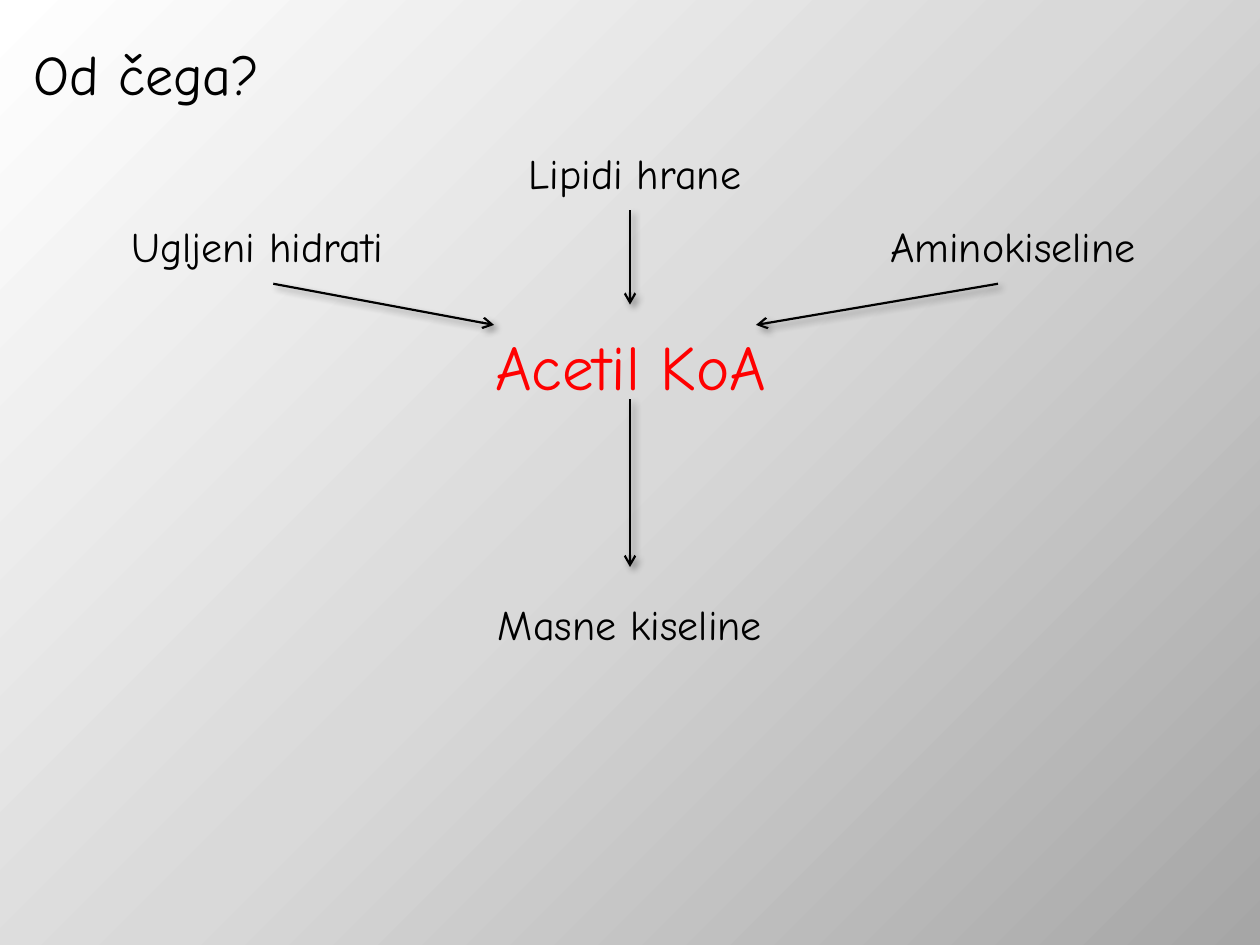
from lxml import etree
from pptx import Presentation
from pptx.dml.color import RGBColor
from pptx.enum.shapes import MSO_CONNECTOR
from pptx.enum.text import PP_ALIGN
from pptx.oxml import parse_xml
from pptx.oxml.ns import nsdecls, qn
from pptx.util import Cm, Pt

STRAIGHT = MSO_CONNECTOR.STRAIGHT
CENTER = PP_ALIGN.CENTER
TOP_SIDE = 0
FONT = "Comic Neue"
BLACK, RED = "000000", "FF0000"
GRADIENT = [(0, "FFFFFF"), (50, "D9D9D9"), (100, "A6A6A6")]
LABEL_HEIGHT = 1.9


def color(hex_value):
    return RGBColor.from_string(hex_value)


def paint_background(slide):
    slide.background.fill.solid()
    stops = "".join(
        f'<a:gs pos="{position * 1000}"><a:srgbClr val="{tone}"/></a:gs>'
        for position, tone in GRADIENT
    )
    gradient = parse_xml(
        f'<a:gradFill {nsdecls("a")} rotWithShape="1"><a:gsLst>{stops}</a:gsLst>'
        '<a:lin ang="2700000" scaled="0"/></a:gradFill>'
    )
    solid = next(slide.element.iter(qn("a:solidFill")))
    solid.getparent().replace(solid, gradient)


def add_label(slide, box, wording, size, tone=BLACK):
    label = slide.shapes.add_textbox(*(Cm(length) for length in box))
    frame = label.text_frame
    frame.word_wrap = True
    frame.text = wording
    paragraph = frame.paragraphs[0]
    paragraph.alignment = CENTER
    paragraph.line_spacing = 1.5
    font = paragraph.runs[0].font
    font.name, font.size = FONT, Pt(size)
    font.color.rgb = color(tone)
    return label


def add_arrow(slide, start, end):
    """Draw a black arrow with a soft shadow from start to end."""
    arrow = slide.shapes.add_connector(
        STRAIGHT, *(Cm(length) for length in (*start, *end))
    )
    arrow.line.color.rgb = color(BLACK)
    arrow.line.width = Pt(1.25)
    etree.SubElement(arrow.line._get_or_add_ln(), qn("a:tailEnd"), type="arrow")
    arrow._element.spPr.append(parse_xml(
        f'<a:effectLst {nsdecls("a")}>'
        f'<a:outerShdw blurRad="{Pt(4)}" dist="{Pt(3)}" dir="2700000" rotWithShape="0">'
        f'<a:srgbClr val="{BLACK}"><a:alpha val="40000"/></a:srgbClr>'
        '</a:outerShdw></a:effectLst>'
    ))
    return arrow


def add_pathway(slide, left, top, width):
    """Show the sources leading to acetyl CoA and on to fatty acids."""
    middle = left + width / 2

    def label(x, y, label_width, wording, size=24, tone=BLACK):
        box = (left + x, top + y, label_width, LABEL_HEIGHT)
        return add_label(slide, box, wording, size, tone)

    def arrow(start_x, start_y, end_x, end_y):
        return add_arrow(
            slide, (middle + start_x, top + start_y), (middle + end_x, top + end_y)
        )

    label(1.27, 1.47, 7.82, "Ugljeni hidrati")
    label(8.69, 3.38, 8.05, "Acetil KoA", 36, RED)
    fatty_acids = label(9.31, 9.09, 6.78, "Masne kiseline")
    label(16.51, 1.47, 7.82, "Aminokiseline")
    label(8.89, 0, 7.82, "Lipidi hrane")

    arrow(-7.19, 3.38, -2.74, 4.21)
    arrow(7.42, 3.38, 2.54, 4.21)
    arrow(0, 1.9, 0, 3.8)
    arrow(0, 5.71, 0, 9.09).end_connect(fatty_acids, TOP_SIDE)


def main():
    deck = Presentation()
    deck.slide_width, deck.slide_height = Cm(25.4), Cm(19.05)
    slide = deck.slides.add_slide(deck.slide_layouts[6])
    paint_background(slide)
    add_label(slide, (0, 0, 5.92, 2.34), "Od čega?", 32)
    add_pathway(slide, left=0, top=2.34, width=25.4)
    deck.save("out.pptx")


if __name__ == "__main__":
    main()
